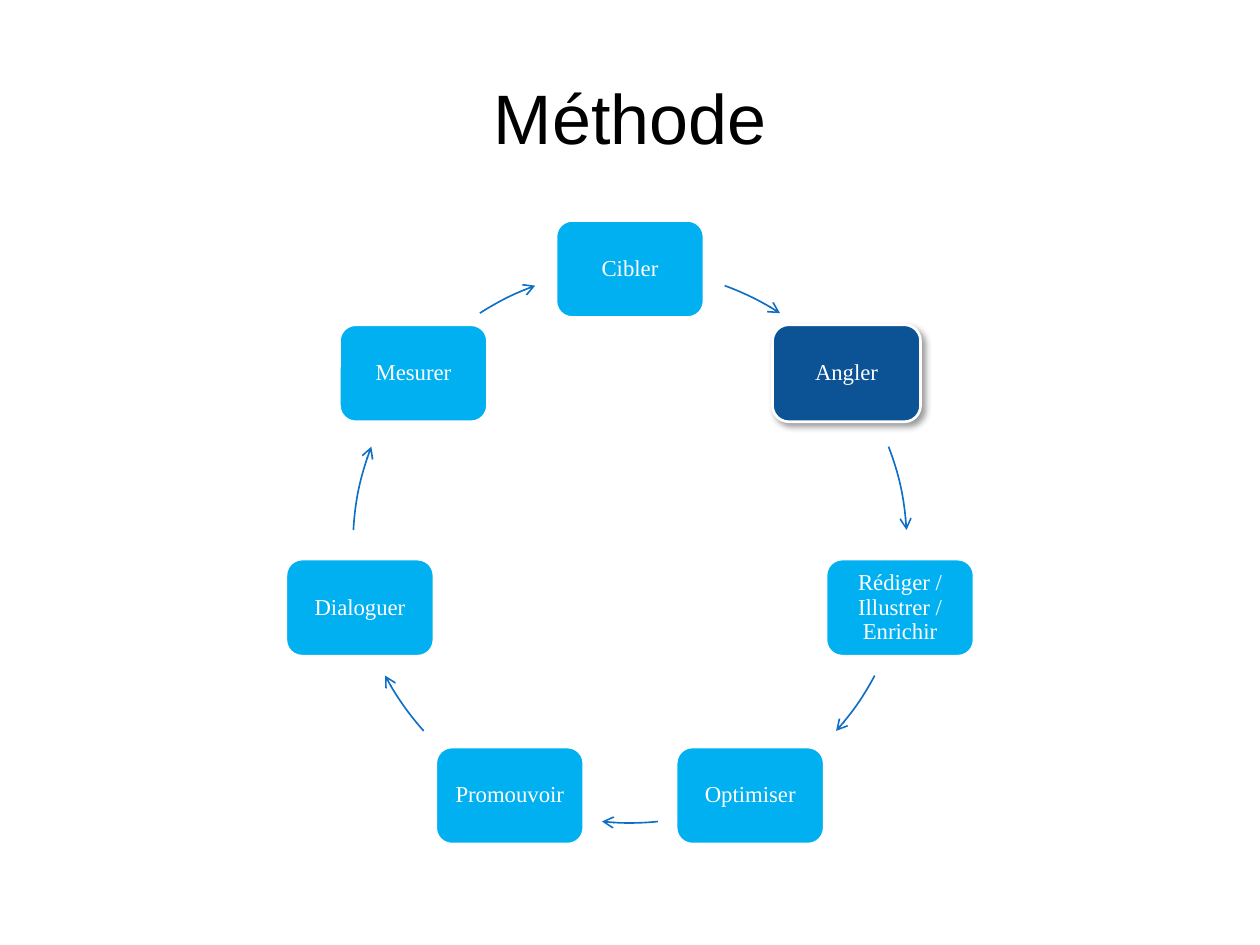
import math
import lxml.etree
import pptx
import pptx.dml.color
import pptx.enum.shapes
import pptx.enum.text
import pptx.oxml.ns
import pptx.util

# Content: steps clockwise from the top, with fill
TITLE = "Méthode"
SKY, NAVY, EDGE, WHITE = "00B0F0", "0B5394", "0F6FC6", "FFFFFF"
STEPS = [
    ("Cibler", SKY),
    ("Angler", NAVY),
    ("Rédiger / Illustrer / Enrichir", SKY),
    ("Optimiser", SKY),
    ("Promouvoir", SKY),
    ("Dialoguer", SKY),
    ("Mesurer", SKY),
]
# Arrow arcs on the right half, in degrees clockwise from the top
RIGHT = [(20, 32.8), (69, 86.7), (117.9, 131.9), (174.2, 185.8)]
ARCS = RIGHT + [(360 - b, 360 - a) for a, b in RIGHT[2::-1]]

# Layout in px
MID_X, MID_Y, RADIUS = 630, 546, 277
BOX_W, BOX_H, PAD = 148, 97, 6
SHAPE = pptx.enum.shapes.MSO_SHAPE
qn = pptx.oxml.ns.qn


def px(n):
    return pptx.util.Emu(round(n * 914400 / 126))


def color(code):
    return pptx.dml.color.RGBColor.from_string(code)


def place(kind, x, y, w, h):
    shape = slide.shapes.add_shape(kind, px(x), px(y), px(w), px(h))
    shape.shadow.inherit = False
    return shape


def stroke(shape, code, width):
    shape.line.color.rgb = color(code)
    shape.line.width = pptx.util.Pt(width)


def write(shape, text, font, size, code, pad):
    frame = shape.text_frame
    frame.word_wrap = True
    frame.vertical_anchor = pptx.enum.text.MSO_ANCHOR.MIDDLE
    frame.margin_left = frame.margin_right = px(pad)
    frame.margin_top = frame.margin_bottom = px(pad)
    para = frame.paragraphs[0]
    para.alignment = pptx.enum.text.PP_ALIGN.CENTER
    run = para.add_run()
    run.text = text
    run.font.name = font
    run.font.size = pptx.util.Pt(size)
    run.font.color.rgb = color(code)
    return para


def shade(shape):
    list_ = shape._element.spPr.find(qn("a:effectLst"))
    drop = lxml.etree.SubElement(
        list_, qn("a:outerShdw"), blurRad=str(pptx.util.Pt(4)),
        dist=str(pptx.util.Pt(3)), dir="2700000", algn="tl", rotWithShape="0")
    tint = lxml.etree.SubElement(drop, qn("a:srgbClr"), val="000000")
    lxml.etree.SubElement(tint, qn("a:alpha"), val="40000")


deck = pptx.Presentation()
deck.slide_width, deck.slide_height = px(1260), px(945)
slide = deck.slides.add_slide(deck.slide_layouts[6])

# Title
head = slide.shapes.add_textbox(px(63), px(38), px(1134), px(157))
write(head, TITLE, "Arial", 40, "000000", PAD)

# Ring of steps, each followed by its arrow
for i, ((name, fill), (start, end)) in enumerate(zip(STEPS, ARCS)):
    turn = math.tau * i / len(STEPS)
    box = place(SHAPE.ROUNDED_RECTANGLE,
                MID_X + RADIUS * math.sin(turn) - BOX_W / 2,
                MID_Y - RADIUS * math.cos(turn) - BOX_H / 2, BOX_W, BOX_H)
    box.fill.solid()
    box.fill.fore_color.rgb = color(fill)
    stroke(box, WHITE, 1.5)
    write(box, name, "Times New Roman", 13, WHITE, PAD).line_spacing = 0.9
    if fill == NAVY:
        shade(box)

    arc = place(SHAPE.ARC, MID_X - RADIUS, MID_Y - RADIUS,
                2 * RADIUS, 2 * RADIUS)
    arc.fill.background()
    stroke(arc, EDGE, 0.94)
    # Preset angles run from 3 o'clock, in units of 1/60000 degree
    for k, deg in enumerate((start, end)):
        arc.adjustments[k] = (deg - 90) % 360 * 0.6
    line = arc._element.spPr.find(qn("a:ln"))
    lxml.etree.SubElement(line, qn("a:tailEnd"), type="arrow")

deck.save("out.pptx")
